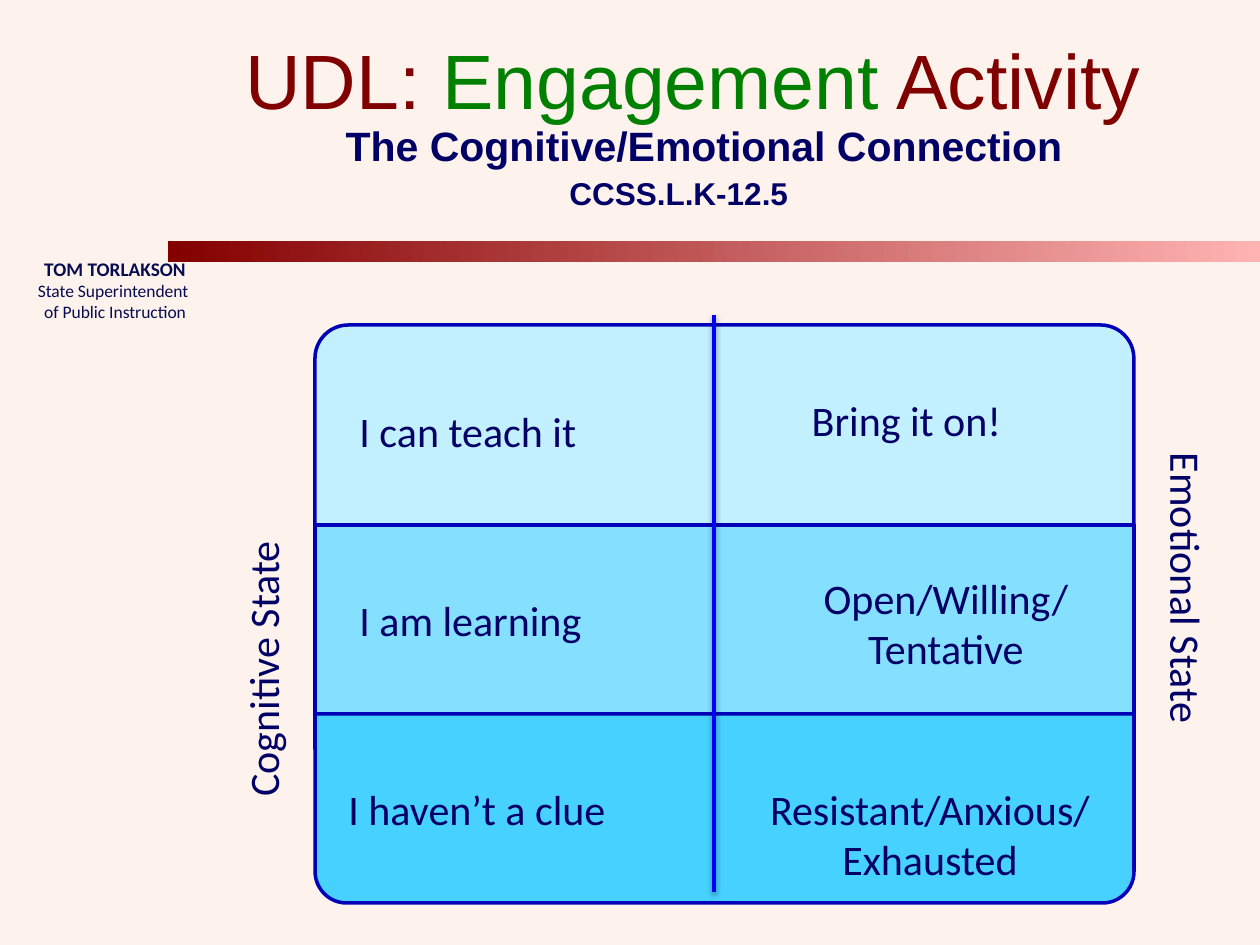
from lxml import etree
from pptx import Presentation
from pptx.dml.color import RGBColor
from pptx.enum import shapes, text
from pptx.oxml import parse_xml
from pptx.util import Emu, Pt

PX = 914400 / 126
NAVY = "000066"
BORDER = "0000B9"
A_NS = "http://schemas.openxmlformats.org/drawingml/2006/main"
RECT = shapes.MSO_SHAPE.RECTANGLE
ROUND_TOP = shapes.MSO_SHAPE.ROUND_2_SAME_RECTANGLE
LEFT, CENTER = text.PP_ALIGN.LEFT, text.PP_ALIGN.CENTER
TOP, MIDDLE = text.MSO_ANCHOR.TOP, text.MSO_ANCHOR.MIDDLE

GRID_LEFT, GRID_WIDTH, GRID_TOP = 315, 819, 325
ROWS = [
    (200, "C2F0FF", ROUND_TOP, 0),
    (189, "85E0FF", RECT, 0),
    (189, "47D1FF", ROUND_TOP, 180),
]

HEADINGS = [
    ((126, 0, 1134, 158), MIDDLE, CENTER, "Arial",
     [("UDL: ", 44, "800000", False), ("Engagement", 44, "008000", False),
      (" Activity", 44, "800000", False)]),
    ((148, 115, 1112, 60), MIDDLE, CENTER, "Arial",
     [("The Cognitive/Emotional Connection", 23.4, NAVY, True)]),
    ((557, 168, 294, 50), TOP, LEFT, "Arial", [("CCSS.L.K-12.5", 18, NAVY, True)]),
    ((10, 242, 210, 95), MIDDLE, CENTER, "Calibri",
     [("TOM TORLAKSON\v", 11, "070C51", True),
      ("State Superintendent \vof Public Instruction", 10, "070C51", False)]),
]

LABELS = [
    ("I can teach it", (347, 399, 336, 64), LEFT, 0),
    ("I am learning", (347, 588, 378, 64), LEFT, 0),
    ("I haven’t a clue", (336, 777, 347, 64), LEFT, 0),
    ("Bring it on!", (798, 388, 217, 64), CENTER, 0),
    ("Open/Willing/Tentative", (788, 566, 316, 115), CENTER, 0),
    ("Resistant/Anxious/ Exhausted", (725, 777, 410, 115), CENTER, 0),
    ("Cognitive State", (53, 567, 420, 64), LEFT, 270),
    ("Emotional State", (1008, 587, 357, 64), LEFT, 90),
]


def px(*values):
    return [Emu(round(v * PX)) for v in values]


def rgb(value):
    return RGBColor.from_string(value)


def add_box(s, kind, box, fill=None, line=None):
    sp = s.shapes.add_shape(kind, *px(*box))
    sp.shadow.inherit = False
    if fill:
        sp.fill.solid()
        sp.fill.fore_color.rgb = rgb(fill)
    if line:
        sp.line.color.rgb = rgb(line)
        sp.line.width = Pt(2)
    else:
        sp.line.fill.background()
    return sp


def add_text(s, box, anchor, align, font, runs, rotation=0):
    sp = s.shapes.add_textbox(*px(*box))
    sp.rotation = rotation
    tf = sp.text_frame
    tf.word_wrap = True
    tf.vertical_anchor = anchor
    p = tf.paragraphs[0]
    p.text = "".join(run[0] for run in runs) if len(runs) == 1 else ""
    p.alignment = align
    if len(runs) > 1:
        for content, *_ in runs:
            for i, part in enumerate(content.split("\v")):
                if i:
                    p.add_line_break()
                if part:
                    p.add_run().text = part
    styles = [run[1:] for run in runs for part in run[0].split("\v") if part]
    for r, (size, color, bold) in zip(p.runs, styles):
        r.font.name = font
        r.font.size = Pt(size)
        r.font.color.rgb = rgb(color)
        r.font.bold = bold


def add_divider(s, x, top, bottom):
    line = s.shapes.add_connector(shapes.MSO_CONNECTOR.STRAIGHT, *px(x, top, x, bottom))
    line.line.color.rgb = rgb("0000FA")
    line.line.width = Pt(2)
    line._element.spPr.append(parse_xml(
        f'<a:effectLst xmlns:a="{A_NS}"><a:outerShdw blurRad="{Pt(3.1)}" '
        f'dist="{Pt(1.6)}" dir="5400000" rotWithShape="0"><a:srgbClr val="000000">'
        '<a:alpha val="38000"/></a:srgbClr></a:outerShdw></a:effectLst>'))


def main():
    prs = Presentation()
    prs.slide_width, prs.slide_height = px(1260, 945)
    s = prs.slides.add_slide(prs.slide_layouts[6])

    backdrop = add_box(s, RECT, (0, 0, 1260, 945), "FEEDE2")
    color = backdrop._element.spPr.find(f".//{{{A_NS}}}srgbClr")
    etree.SubElement(color, f"{{{A_NS}}}alpha", val="63000")

    bar = add_box(s, RECT, (168, 241, 1092, 21))
    bar.fill.gradient()
    bar.fill.gradient_angle = 0
    for stop, value, position in zip(bar.fill.gradient_stops, ("840000", "FFB3B3"), (0, 1)):
        stop.color.rgb = rgb(value)
        stop.position = position

    for heading in HEADINGS:
        add_text(s, *heading)

    top = GRID_TOP
    for height, fill, kind, rotation in ROWS:
        sp = add_box(s, kind, (GRID_LEFT, top, GRID_WIDTH, height), fill, BORDER)
        sp.rotation = rotation
        top += height

    add_divider(s, 714, 315, 892)
    for content, box, align, rotation in LABELS:
        add_text(s, box, TOP, align, "Calibri", [(content, 24, NAVY, False)], rotation)

    prs.save("out.pptx")


if __name__ == "__main__":
    main()
